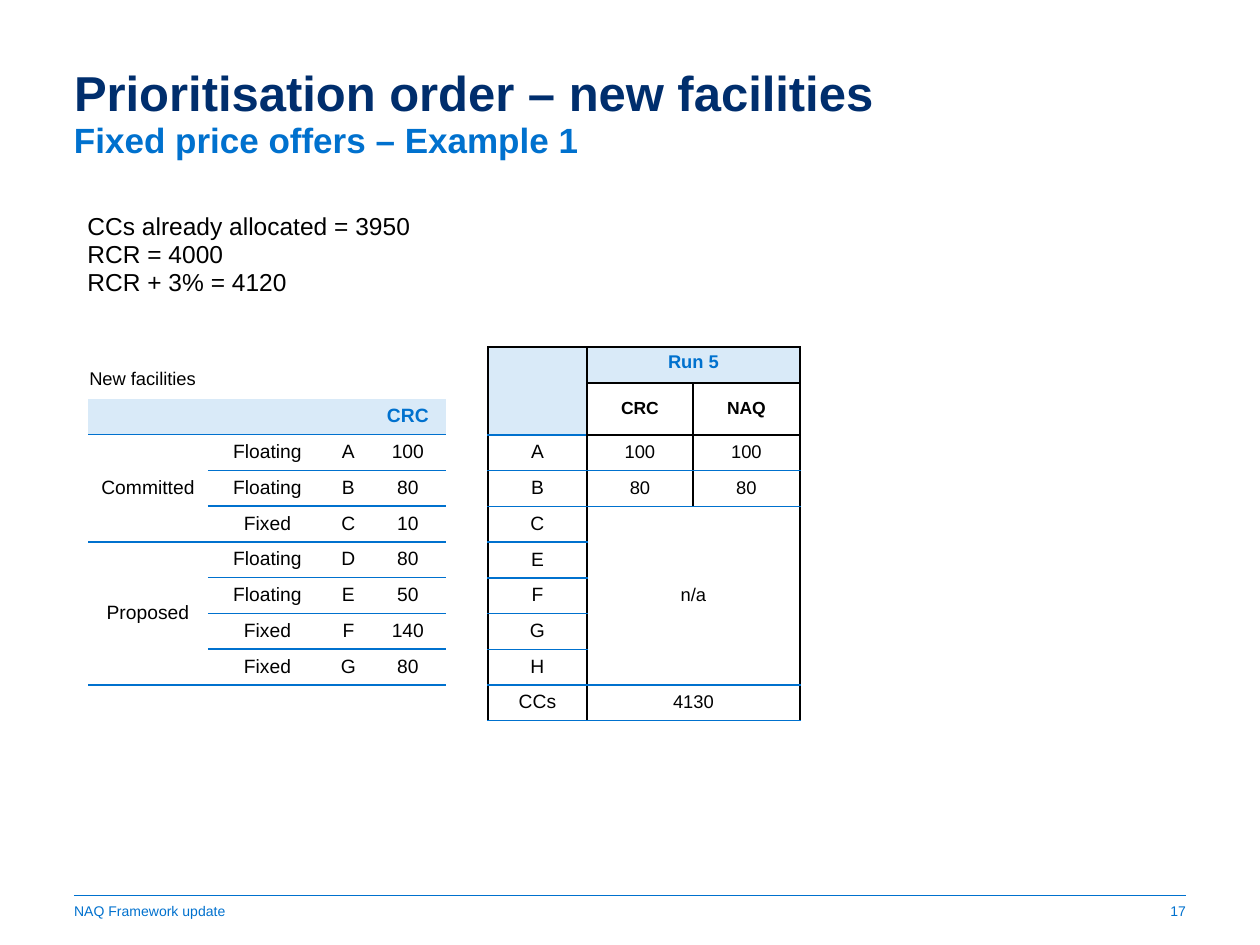
from lxml import etree
from pptx import Presentation
from pptx.dml.color import RGBColor
from pptx.enum.shapes import MSO_CONNECTOR
from pptx.enum.text import MSO_ANCHOR, PP_ALIGN
from pptx.oxml.ns import qn
from pptx.util import Emu, Pt

NAVY = RGBColor(0x00, 0x2E, 0x6D)
BLUE = RGBColor(0x00, 0x71, 0xCE)
PALE_BLUE = RGBColor(0xD9, 0xEA, 0xF8)
BLACK = RGBColor(0x00, 0x00, 0x00)
STRAIGHT = MSO_CONNECTOR.STRAIGHT
TOP, MIDDLE = MSO_ANCHOR.TOP, MSO_ANCHOR.MIDDLE
LEFT, CENTER, RIGHT = PP_ALIGN.LEFT, PP_ALIGN.CENTER, PP_ALIGN.RIGHT
PLAIN_TABLE = "{2D5ABB26-0587-4C30-8999-92F81FD0307C}"
EDGE_TAGS = {"left": "a:lnL", "right": "a:lnR", "top": "a:lnT", "bottom": "a:lnB"}
BODY_HEIGHT, BODY_ROWS = 286, 8


def px(length):
    return Emu(round(length * 914400 / 126))


class SlideBuilder:
    """Holds the deck style and the current slide."""

    font_name = "Arial"

    def __init__(self, presentation):
        self.slide = presentation.slides.add_slide(presentation.slide_layouts[6])

    def add_run(self, paragraph, text, size, color, bold=False):
        run = paragraph.add_run()
        run.text = text
        run.font.name = self.font_name
        run.font.size = Pt(size)
        run.font.bold = bold
        run.font.color.rgb = color

    def add_text(self, box, lines, size, color, bold=False, spacing=0.95,
                 align=LEFT, anchor=TOP, margin=None):
        frame = self.slide.shapes.add_textbox(*map(px, box)).text_frame
        frame.word_wrap = True
        frame.vertical_anchor = anchor
        if margin is not None:
            frame.margin_left = frame.margin_right = px(margin)
            frame.margin_top = frame.margin_bottom = px(margin)
        for index, line in enumerate(lines):
            paragraph = frame.add_paragraph() if index else frame.paragraphs[0]
            paragraph.alignment = align
            paragraph.line_spacing = spacing
            self.add_run(paragraph, line, size, color, bold)

    def add_line(self, start, end, color, width):
        line = self.slide.shapes.add_connector(STRAIGHT, *map(px, start + end))
        line.line.color.rgb = color
        line.line.width = Pt(width)
        etree.SubElement(line._element.spPr, qn("a:effectLst"))

    def add_table(self, left, top, widths, heights, merges):
        box = px(left), px(top), px(sum(widths)), Emu(sum(heights))
        table = self.slide.shapes.add_table(len(heights), len(widths), *box).table
        table._tbl.tblPr.find(qn("a:tableStyleId")).text = PLAIN_TABLE
        table.first_row = table.horz_banding = False
        for column, width in zip(table.columns, widths):
            column.width = px(width)
        for row, height in zip(table.rows, heights):
            row.height = height
        for first, last in merges:
            table.cell(*first).merge(table.cell(*last))
        return table

    def fill_cell(self, cell, text="", size=11, color=BLACK, bold=False,
                  fill=None, anchor=MIDDLE):
        cell.vertical_anchor = anchor
        if fill is None:
            cell.fill.background()
        else:
            cell.fill.solid()
            cell.fill.fore_color.rgb = fill
        paragraph = cell.text_frame.paragraphs[0]
        paragraph.alignment = CENTER
        paragraph.line_spacing = 0.95
        if text:
            self.add_run(paragraph, text, size, color, bold)
        etree.SubElement(paragraph._p, qn("a:endParaRPr"), sz=str(int(size * 100)))

    def add_borders(self, table, position, edges, merges):
        row, column = position
        first, last = next(
            ((a, b) for a, b in merges
             if a[0] <= row <= b[0] and a[1] <= column <= b[1]),
            (position, position))
        outer = {"left": column == first[1], "right": column == last[1],
                 "top": row == first[0], "bottom": row == last[0]}
        properties = table.cell(row, column)._tc.get_or_add_tcPr()
        drawn = [edge for edge in EDGE_TAGS
                 if edge in edges and (outer[edge] or position == first)]
        for index, edge in enumerate(drawn):
            line = etree.Element(qn(EDGE_TAGS[edge]), w=str(Pt(1)))
            fill = etree.SubElement(line, qn("a:solidFill"))
            etree.SubElement(fill, qn("a:srgbClr"), val=str(edges[edge]))
            properties.insert(index, line)


def add_facilities(builder, row_height):
    merges = [((1, 0), (3, 0)), ((4, 0), (7, 0))]
    rows = [
        ("", "", "", "CRC"),
        ("Committed", "Floating", "A", "100"),
        ("", "Floating", "B", "80"),
        ("", "Fixed", "C", "10"),
        ("Proposed", "Floating", "D", "80"),
        ("", "Floating", "E", "50"),
        ("", "Fixed", "F", "140"),
        ("", "Fixed", "G", "80"),
    ]
    table = builder.add_table(88, 399, [120, 119, 43, 76],
                              [row_height] * BODY_ROWS, merges)
    header = {"color": BLUE, "bold": True, "fill": PALE_BLUE}
    for row, values in enumerate(rows):
        for column, text in enumerate(values):
            style = {} if row else header
            builder.fill_cell(table.cell(row, column), text, **style)
            builder.add_borders(table, (row, column), {"bottom": BLUE}, merges)


def add_run_results(builder, row_height):
    merges = [((0, 0), (1, 0)), ((0, 1), (0, 2)), ((4, 1), (8, 2)), ((9, 1), (9, 2))]
    rows = [
        ("", "Run 5", ""),
        ("", "CRC", "NAQ"),
        ("A", "100", "100"),
        ("B", "80", "80"),
        ("C", "n/a", ""),
        ("E", "", ""),
        ("F", "", ""),
        ("G", "", ""),
        ("H", "", ""),
        ("CCs", "4130", ""),
    ]
    heights = [px(36), px(52)] + [row_height] * BODY_ROWS
    table = builder.add_table(488, 347, [99, 106, 107], heights, merges)
    run_header = {"size": 10.5, "color": BLUE, "bold": True, "fill": PALE_BLUE,
                  "anchor": TOP}
    column_header = {"size": 10, "bold": True}
    for row, values in enumerate(rows):
        for column, text in enumerate(values):
            if column == 0:
                style = {"fill": PALE_BLUE if row < 2 else None}
            else:
                style = {0: run_header, 1: column_header}.get(row, {"size": 10.5})
            edges = {"left": BLACK, "right": BLACK,
                     "bottom": BLACK if row < 2 and column else BLUE}
            if row < 2 or (row == 2 and column):
                edges["top"] = BLACK
            builder.fill_cell(table.cell(row, column), text, **style)
            builder.add_borders(table, (row, column), edges, merges)


def main():
    presentation = Presentation()
    presentation.slide_width, presentation.slide_height = px(1260), px(945)
    builder = SlideBuilder(presentation)

    builder.add_line((74, 895), (1186, 895), BLUE, 0.5)
    builder.add_text((69, 64, 915, 59), ["Prioritisation order – new facilities"],
                     28, NAVY, bold=True, spacing=0.9, margin=5)
    builder.add_text((69, 117, 843, 59), ["Fixed price offers – Example 1"],
                     20, BLUE, bold=True, margin=5)
    footer = {"size": 8, "color": BLUE, "spacing": 1.0, "anchor": MIDDLE, "margin": 5}
    builder.add_text((69, 898, 422, 25), ["NAQ Framework update"], **footer)
    builder.add_text((1091, 898, 100, 25), ["17"], align=RIGHT, **footer)
    builder.add_text((75, 207, 394, 97),
                     ["CCs already allocated = 3950", "RCR = 4000", "RCR + 3% = 4120"],
                     14, BLACK)

    row_height = px(BODY_HEIGHT) // BODY_ROWS
    add_facilities(builder, row_height)
    builder.add_text((77, 363, 265, 34), ["New facilities"], 10.5, BLACK)
    add_run_results(builder, row_height)

    presentation.save("out.pptx")


if __name__ == "__main__":
    main()
